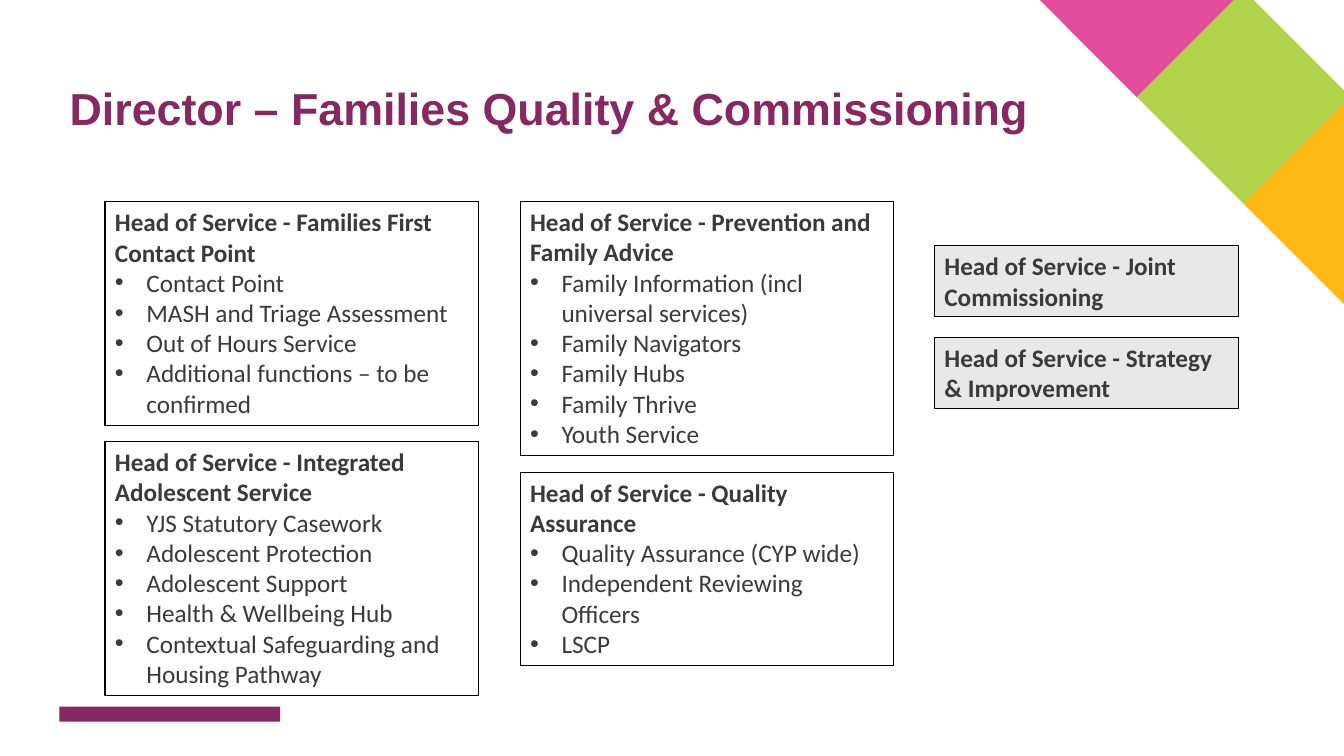
from dataclasses import dataclass

from lxml.etree import SubElement
from pptx import Presentation
from pptx.dml.color import RGBColor
from pptx.enum.shapes import MSO_SHAPE
from pptx.enum.text import MSO_ANCHOR, MSO_AUTO_SIZE, PP_ALIGN
from pptx.oxml.ns import qn
from pptx.shapes.autoshape import Shape
from pptx.slide import Slide
from pptx.text.text import TextFrame
from pptx.util import Pt

PURPLE = "862861"
TEXT_GREY = "3A3A3A"
LINE_HEIGHT = 21.8
BOX_PADDING = 7.2
BULLET_INDENT = 22.5


@dataclass
class Service:
    heading: str
    functions: list[str]
    line_count: int


@dataclass
class Column:
    left: float
    top: float
    width: float
    gap: float
    fill: str
    services: list[Service]


COLUMNS = [
    Column(75, 144, 267, 11.6, "FFFFFF", [
        Service("Head of Service - Families First Contact Point", [
            "Contact Point",
            "MASH and Triage Assessment",
            "Out of Hours Service",
            "Additional functions – to be confirmed",
        ], 7),
        Service("Head of Service - Integrated Adolescent Service", [
            "YJS Statutory Casework",
            "Adolescent Protection",
            "Adolescent Support",
            "Health & Wellbeing Hub",
            "Contextual Safeguarding and Housing Pathway",
        ], 8),
    ]),
    Column(371.5, 144, 267, 11.6, "FFFFFF", [
        Service("Head of Service - Prevention and Family Advice", [
            "Family Information (incl universal services)",
            "Family Navigators",
            "Family Hubs",
            "Family Thrive",
            "Youth Service",
        ], 8),
        Service("Head of Service - Quality Assurance", [
            "Quality Assurance (CYP wide)",
            "Independent Reviewing Officers",
            "LSCP",
        ], 6),
    ]),
    Column(667.5, 175.5, 217.5, 14.6, "E8E8E8", [
        Service("Head of Service - Joint Commissioning", [], 2),
        Service("Head of Service - Strategy & Improvement", [], 2),
    ]),
]


def colour(code: str) -> RGBColor:
    return RGBColor.from_string(code)


def write(frame: TextFrame, text: str, *, first: bool = False, bullet: bool = False,
          size: float = 18, font: str = "Calibri", ink: str = TEXT_GREY,
          bold: bool = False, spacing: float = 1.0) -> None:
    para = frame.paragraphs[0] if first else frame.add_paragraph()
    para.alignment = PP_ALIGN.LEFT
    para.line_spacing = spacing
    if bullet:
        properties = para._p.get_or_add_pPr()
        properties.set("marL", str(Pt(BULLET_INDENT)))
        properties.set("indent", str(-Pt(BULLET_INDENT)))
        SubElement(properties, qn("a:buFont")).set("typeface", "Arial")
        SubElement(properties, qn("a:buChar")).set("char", "•")
    span = para.add_run()
    span.text = text
    span.font.name = font
    span.font.size = Pt(size)
    span.font.bold = bold
    span.font.color.rgb = colour(ink)


def add_rectangle(page: Slide, left: float, top: float, width: float, height: float,
                  fill: str, outline: str | None = None) -> Shape:
    box = page.shapes.add_shape(MSO_SHAPE.RECTANGLE, Pt(left), Pt(top), Pt(width), Pt(height))
    box.shadow.inherit = False
    box.fill.solid()
    box.fill.fore_color.rgb = colour(fill)
    if outline:
        box.line.color.rgb = colour(outline)
        box.line.width = Pt(0.75)
    else:
        box.line.fill.background()
    return box


def add_decoration(page: Slide) -> None:
    for step, fill in enumerate(["E34C9B", "B1D34C", "FDB913"]):
        offset = step * 76.2
        square = add_rectangle(page, 758.2 + offset, -60.8 + offset, 108, 108, fill)
        square.rotation = 45
    # Plain bar in the place of the footer wordmark
    add_rectangle(page, 42.5, 504.7, 157.7, 10.8, PURPLE)


def add_title(page: Slide, text: str) -> None:
    title = page.shapes.title
    title.left, title.top, title.width, title.height = Pt(42.5), Pt(28.8), Pt(723), Pt(71.3)
    frame = title.text_frame
    frame.word_wrap = True
    frame.vertical_anchor = MSO_ANCHOR.BOTTOM
    write(frame, text, first=True, size=32, font="Arial", ink=PURPLE, bold=True, spacing=0.9)


def add_column(page: Slide, column: Column) -> None:
    top = column.top
    for service in column.services:
        height = service.line_count * LINE_HEIGHT + BOX_PADDING
        box = add_rectangle(page, column.left, top, column.width, height, column.fill, "000000")
        frame = box.text_frame
        frame.word_wrap = True
        frame.auto_size = MSO_AUTO_SIZE.SHAPE_TO_FIT_TEXT
        frame.vertical_anchor = MSO_ANCHOR.TOP
        write(frame, service.heading, first=True, bold=True)
        for function in service.functions:
            write(frame, function, bullet=True)
        top += height + column.gap


def main() -> None:
    deck = Presentation()
    deck.slide_width, deck.slide_height = Pt(960), Pt(540)
    page = deck.slides.add_slide(deck.slide_layouts[5])

    # Corner squares and footer
    add_decoration(page)

    # Title
    add_title(page, "Director – Families Quality & Commissioning")

    # Heads of service
    for column in COLUMNS:
        add_column(page, column)

    deck.save("out.pptx")


if __name__ == "__main__":
    main()
